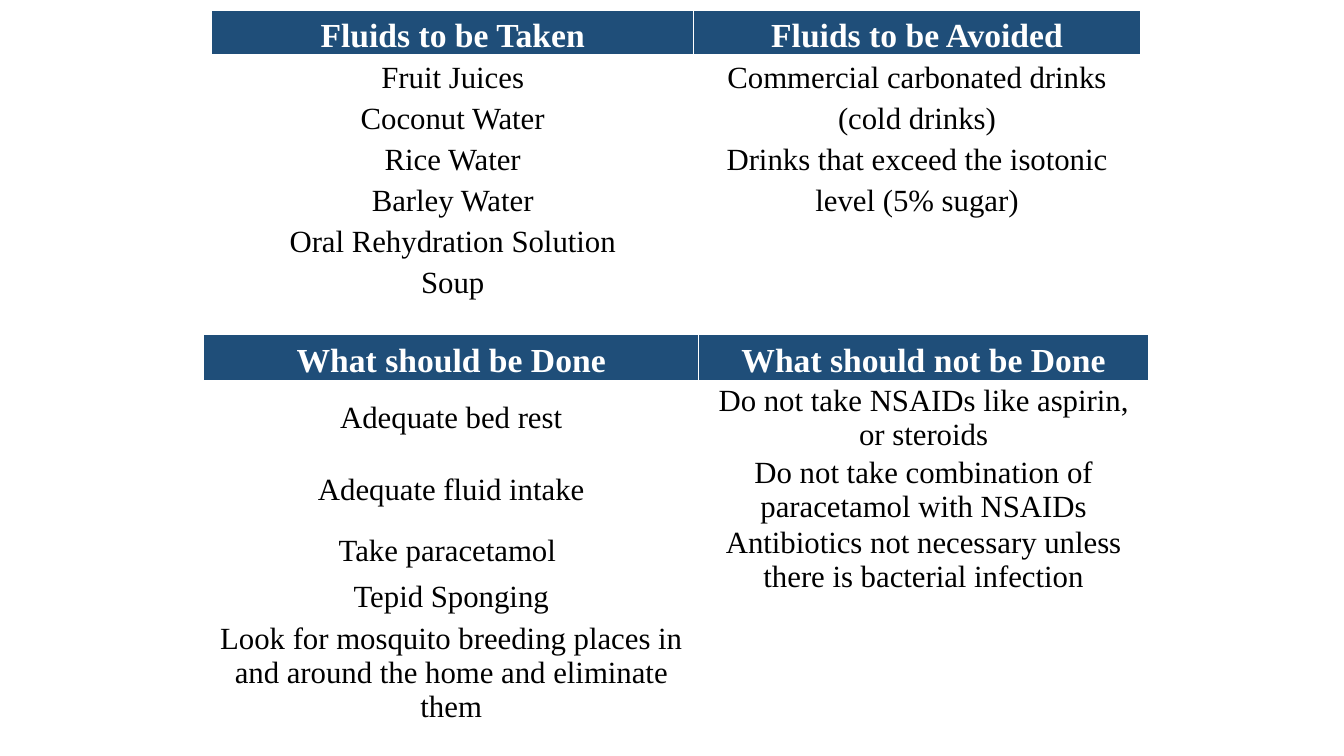
import dataclasses

import pptx
import pptx.dml.color
import pptx.enum.text
import pptx.oxml
import pptx.oxml.ns
import pptx.util

Inches = pptx.util.Inches
Pt = pptx.util.Pt
Color = pptx.dml.color.RGBColor.from_string
Anchor = pptx.enum.text.MSO_ANCHOR


@dataclasses.dataclass(frozen=True)
class Theme:
    font: str = "Times New Roman"
    header_fill: str = "1F4E79"
    header_text: str = "FFFFFF"
    body_text: str = "000000"
    border: str = "FFFFFF"
    header_size: int = 24
    body_size: int = 22


def apply_format(target, values):
    for name, value in values.items():
        setattr(target, name, value)


class SlideBuilder:
    def __init__(self, deck, theme):
        self.theme = theme
        self.slide = deck.slides.add_slide(deck.slide_layouts[6])

    def border(self, cell):
        properties = cell._tc.get_or_add_tcPr()
        for side in ("lnL", "lnR", "lnT", "lnB"):
            properties.append(pptx.oxml.parse_xml(
                f'<a:{side} {pptx.oxml.ns.nsdecls("a")} w="12700"><a:solidFill>'
                f'<a:srgbClr val="{self.theme.border}"/></a:solidFill></a:{side}>'))

    def text(self, cell, lines, header, paragraph_format):
        theme = self.theme
        size = theme.header_size if header else theme.body_size
        color = theme.header_text if header else theme.body_text
        frame = cell.text_frame
        for index, line in enumerate(lines):
            para = frame.add_paragraph() if index else frame.paragraphs[0]
            apply_format(para, paragraph_format)
            span = para.add_run()
            span.text = line
            apply_format(span.font, {"name": theme.font, "size": Pt(size), "bold": header})
            span.font.color.rgb = Color(color)

    def table(self, left, top, widths, heights, rows, margin, body_spacing, space_after, body_anchor):
        table = self.slide.shapes.add_table(
            len(rows), len(widths), Inches(left), Inches(top),
            Inches(sum(widths)), Inches(sum(heights))).table
        apply_format(table, {"first_row": False, "horz_banding": False})
        for column, width in zip(table.columns, widths):
            column.width = Inches(width)
        for row_index, (height, row) in enumerate(zip(heights, rows)):
            table.rows[row_index].height = Inches(height)
            header = row_index == 0
            paragraph_format = {
                "alignment": pptx.enum.text.PP_ALIGN.CENTER,
                "line_spacing": 1.2 if header else body_spacing,
                "space_after": Pt(space_after),
            }
            for column_index, lines in enumerate(row):
                cell = table.cell(row_index, column_index)
                single_top = len(row) > 1 and lines == ANTIBIOTICS
                apply_format(cell, {
                    "margin_left": Inches(margin), "margin_right": Inches(margin),
                    "margin_top": 0, "margin_bottom": 0,
                    "vertical_anchor": Anchor.TOP if header or single_top else body_anchor,
                })
                self.border(cell)
                if header:
                    cell.fill.solid()
                    cell.fill.fore_color.rgb = Color(self.theme.header_fill)
                else:
                    cell.fill.background()
                self.text(cell, lines, header, paragraph_format)


ANTIBIOTICS = ["Antibiotics not necessary unless there is bacterial infection"]

FLUIDS = [
    (["Fluids to be Taken"], ["Fluids to be Avoided"]),
    (["Fruit Juices", "Coconut Water", "Rice Water", "Barley Water",
      "Oral Rehydration Solution", "Soup"],
     ["Commercial carbonated drinks (cold drinks)",
      "Drinks that exceed the isotonic level (5% sugar)"]),
]

ACTIONS = [
    (["What should be Done"], ["What should not be Done"]),
    (["Adequate bed rest"], ["Do not take NSAIDs like aspirin, or steroids"]),
    (["Adequate fluid intake"], ["Do not take combination of paracetamol with NSAIDs"]),
    (["Take paracetamol ", "Tepid Sponging"], ANTIBIOTICS),
    (["Look for mosquito breeding places in and around the home and eliminate them"], []),
]


def main():
    deck = pptx.Presentation()
    apply_format(deck, {"slide_width": Inches(13.33), "slide_height": Inches(7.5)})
    page = SlideBuilder(deck, Theme())
    page.table(2.1, 0.1, (4.78, 4.43), (0.44, 2.64), FLUIDS,
               margin=0.07, body_spacing=1.2, space_after=0, body_anchor=Anchor.TOP)
    page.table(2.02, 3.32, (4.91, 4.46), (0.46, 0.73, 0.71, 0.95, 0.93), ACTIONS,
               margin=0.06, body_spacing=1.0, space_after=8, body_anchor=Anchor.MIDDLE)
    deck.save("out.pptx")


if __name__ == "__main__":
    main()
